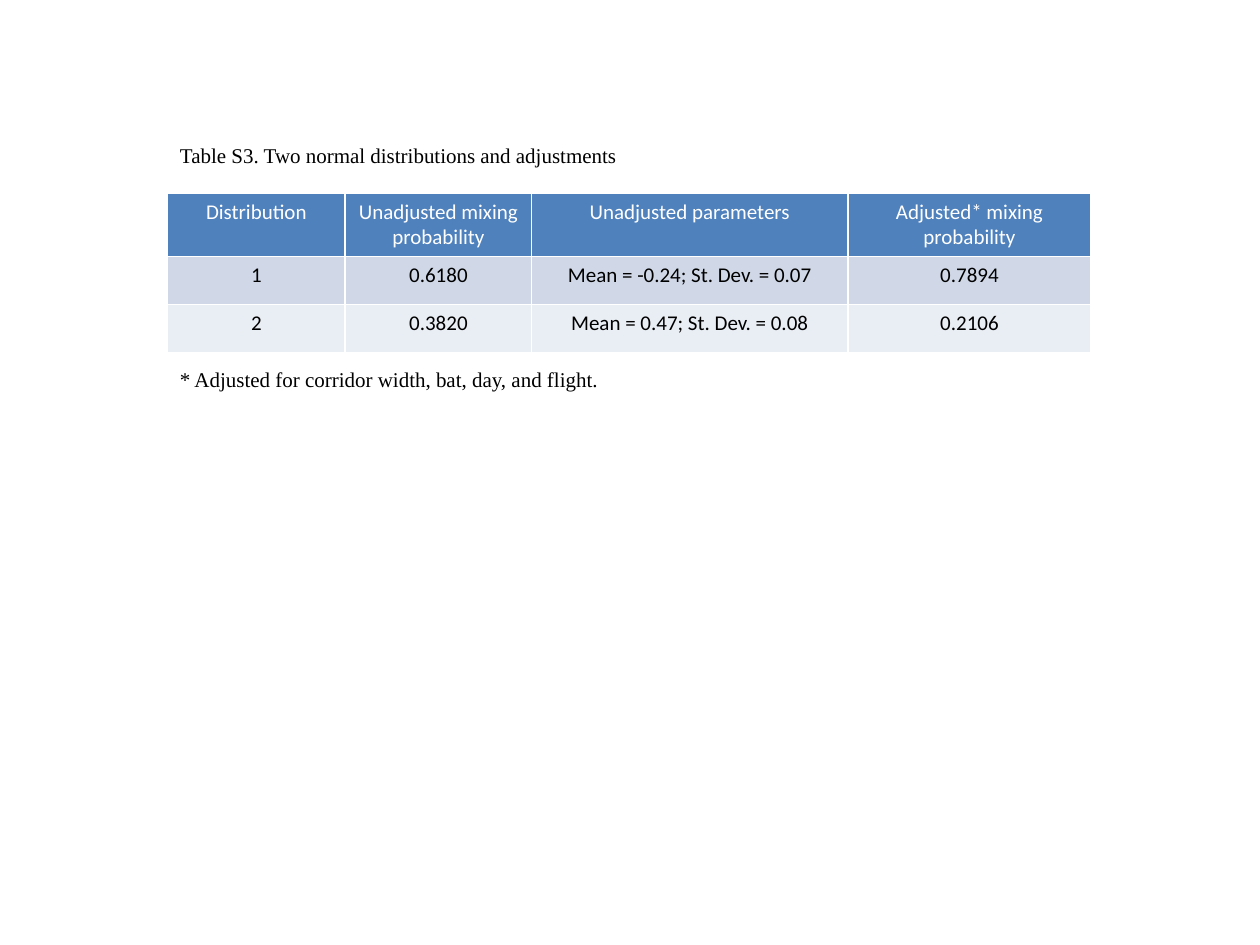
from pptx import Presentation
from pptx.dml.color import RGBColor
from pptx.enum import text
from pptx.util import Inches, Pt

BLACK = RGBColor(0x00, 0x00, 0x00)
WHITE = RGBColor(0xFF, 0xFF, 0xFF)
HEADER_BLUE = RGBColor(0x4F, 0x81, 0xBD)
BAND_DARK = RGBColor(0xD0, 0xD8, 0xE8)
BAND_LIGHT = RGBColor(0xE9, 0xED, 0xF4)

LEFT = Inches(1.33)
COLUMN_WIDTHS = [1.41, 1.48, 2.51, 1.93]
ROW_HEIGHTS = [0.5, 0.38, 0.38]
ROW_STYLES = [(HEADER_BLUE, WHITE), (BAND_DARK, BLACK), (BAND_LIGHT, BLACK)]
ROWS = [
    ["Distribution", "Unadjusted mixing probability",
     "Unadjusted parameters", "Adjusted* mixing\nprobability"],
    ["1", "0.6180", "Mean = -0.24; St. Dev. = 0.07", "0.7894"],
    ["2", "0.3820", "Mean = 0.47; St. Dev. = 0.08", "0.2106"],
]
CAPTIONS = [
    ("Table S3. Two normal distributions and adjustments", 1.08, 3.7, False),
    ("* Adjusted for corridor width, bat, day, and flight.", 2.86, 7.5, True),
]


def format_font(font, name, color):
    values = {"name": name, "size": Pt(12), "bold": False}
    for key, value in values.items():
        setattr(font, key, value)
    font.color.rgb = color


deck = Presentation()
deck.slide_width, deck.slide_height = Inches(10), Inches(7.5)
page = deck.slides.add_slide(deck.slide_layouts[6])

# The default table style supplies the white cell borders.
table = page.shapes.add_table(
    len(ROWS), len(COLUMN_WIDTHS), LEFT, Inches(1.53),
    Inches(sum(COLUMN_WIDTHS)), Inches(sum(ROW_HEIGHTS))).table
for column, width in zip(table.columns, COLUMN_WIDTHS):
    column.width = Inches(width)
for row, height, words, (fill, color) in zip(
        table.rows, ROW_HEIGHTS, ROWS, ROW_STYLES):
    row.height = Inches(height)
    for cell, wording in zip(row.cells, words):
        cell.text = wording
        cell.fill.solid()
        cell.fill.fore_color.rgb = fill
        for para in cell.text_frame.paragraphs:
            para.alignment = text.PP_ALIGN.CENTER
            for span in para.runs:
                format_font(span.font, "Calibri", color)

for wording, top, width, wraps in CAPTIONS:
    box = page.shapes.add_textbox(LEFT, Inches(top), Inches(width), Inches(0.3))
    frame = box.text_frame
    frame.word_wrap = wraps
    frame.auto_size = text.MSO_AUTO_SIZE.SHAPE_TO_FIT_TEXT
    frame.text = wording
    format_font(frame.paragraphs[0].runs[0].font, "Times New Roman", BLACK)

deck.save("out.pptx")
